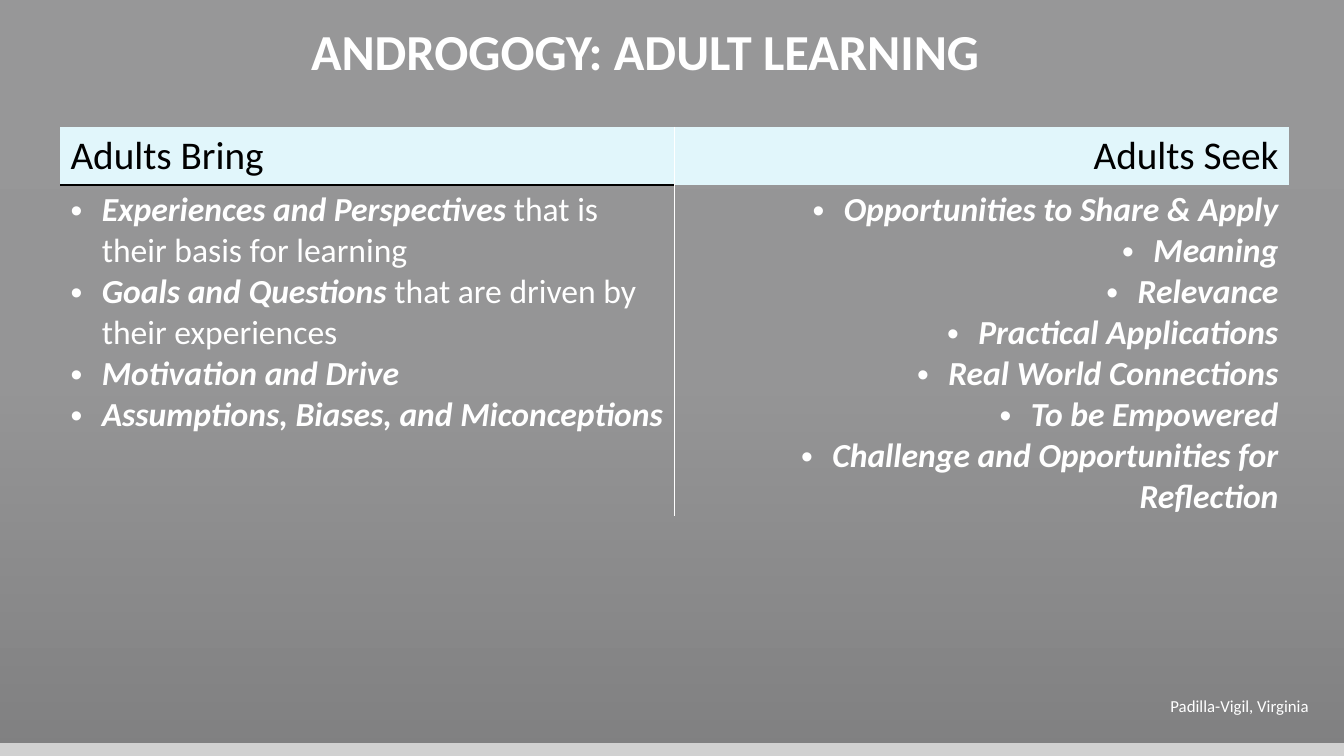
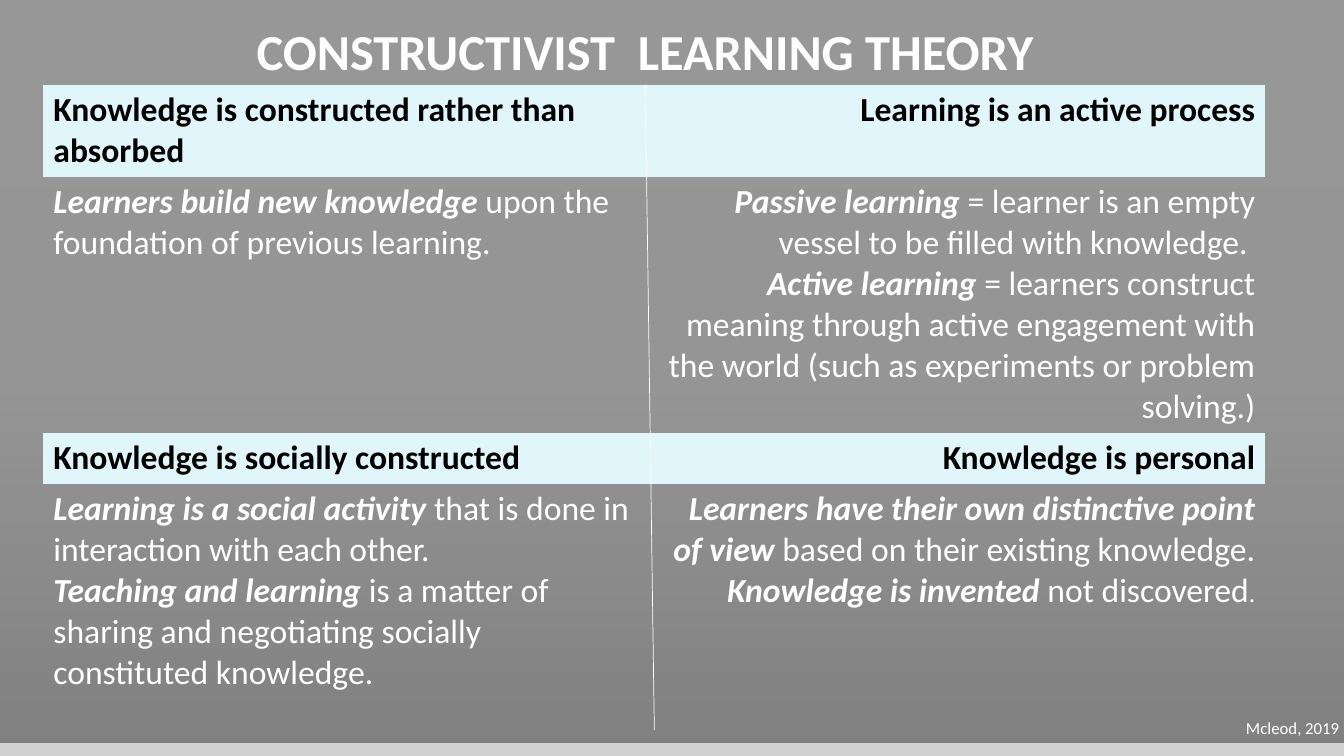
import pptx
import pptx.dml.color
import pptx.enum.shapes
import pptx.enum.text
import pptx.oxml
import pptx.oxml.ns
import pptx.util
from pptx.util import Inches, Pt

COLORS = {"text": "FFFFFF", "dark": "000000", "head": "E1F6FB", "panel": "313133"}
BACK = {0: "FFFFFF", 50: "FBFBFB", 100: "D1D1D1"}
FONT = "Calibri"
PLAIN_GRID = "{2D5ABB26-0587-4C30-8999-92F81FD0307C}"
ALIGN = pptx.enum.text.PP_ALIGN
SHAPE = pptx.enum.shapes.MSO_SHAPE
LINK = pptx.enum.shapes.MSO_CONNECTOR


def rgb(name):
    return pptx.dml.color.RGBColor.from_string(COLORS[name])


def node(xml):
    """Parse an XML piece whose root tag uses the a: prefix."""
    tag, rest = xml[1:].split(" ", 1)
    return pptx.oxml.parse_xml(f"<{tag} {pptx.oxml.ns.nsdecls('a')} {rest}")


class Deck:
    def __init__(self):
        self.prs = pptx.Presentation()
        self.prs.slide_width = Inches(13.33)
        self.prs.slide_height = Inches(7.5)
        self.slide = None
        self.paint()

    def paint(self):
        """Give the master its vertical gradient."""
        master = self.prs.slide_master
        fill = master.background.fill
        fill.gradient()
        fill.gradient_angle = 270
        stops = master.element.xpath(".//p:bg//a:gsLst")[0]
        for stop in list(stops):
            stops.remove(stop)
        for place, color in BACK.items():
            stops.append(node(f'<a:gs pos="{place * 1000}">'
                              f'<a:srgbClr val="{color}"/></a:gs>'))

    def start(self, title):
        """Add a slide with its panel and title."""
        self.slide = self.prs.slides.add_slide(self.prs.slide_layouts[5])
        head = self.slide.shapes.title
        head.element.addprevious(self.panel().element)
        head.left, head.top = Inches(1.95), Inches(0.14)
        head.width, head.height = Inches(8.9), Inches(0.71)
        frame = head.text_frame
        frame.word_wrap = True
        frame.auto_size = pptx.enum.text.MSO_AUTO_SIZE.NONE
        para = frame.paragraphs[0]
        para.alignment = ALIGN.CENTER
        self.run(para, title, 36, "text", bold=True)

    def panel(self):
        box = self.slide.shapes.add_shape(
            SHAPE.RECTANGLE, 0, 0, self.prs.slide_width, Inches(7.37))
        box.shadow.inherit = False
        box.line.fill.background()
        box.fill.solid()
        box.fill.fore_color.rgb = rgb("panel")
        color = box.element.spPr.xpath("./a:solidFill/a:srgbClr")[0]
        color.append(node('<a:alpha val="50000"/>'))
        return box

    def run(self, para, text, size, color, bold=False, italic=False):
        run = para.add_run()
        run.text = text
        font = run.font
        font.name, font.size = FONT, Pt(size)
        font.bold, font.italic = bold, italic
        font.color.rgb = rgb(color)

    def bullet(self, para):
        props = para._p.get_or_add_pPr()
        props.set("marL", str(Inches(0.31)))
        props.set("indent", str(-Inches(0.31)))
        props.append(node('<a:buFont typeface="Arial"/>'))
        props.append(node('<a:buChar char="•"/>'))

    def table(self, left, top, cols, rows):
        table = self.slide.shapes.add_table(
            len(rows), len(cols), Inches(left), Inches(top),
            Inches(sum(cols)), Inches(sum(rows))).table
        table.first_row = table.horz_banding = False
        table._tbl.tblPr.xpath("./a:tableStyleId")[0].text = PLAIN_GRID
        for col, width in zip(table.columns, cols):
            col.width = Inches(width)
        for row, height in zip(table.rows, rows):
            row.height = Inches(height)
        return table

    def lines(self, cell, side):
        """Yield a function that gives the next paragraph of a cell."""
        frame = cell.text_frame
        fresh = [frame.paragraphs[0]]

        def add():
            para = fresh.pop() if fresh else frame.add_paragraph()
            para.alignment = side
            return para
        return add

    def heads(self, table, row, texts, size, bold):
        for col, text in enumerate(texts):
            cell = table.cell(row, col)
            cell.fill.solid()
            cell.fill.fore_color.rgb = rgb("head")
            para = self.lines(cell, SIDES[col])()
            self.run(para, text, size, "dark", bold)

    def body(self, table, row, cells, bullets=False):
        """Fill a row; runs alternate between strong and plain text."""
        for col, paras in enumerate(cells):
            cell = table.cell(row, col)
            cell.fill.background()
            add = self.lines(cell, SIDES[col])
            for runs in paras:
                para = add()
                if bullets:
                    self.bullet(para)
                for num, text in enumerate(runs):
                    strong = num % 2 == 0
                    size = 18 if text == "." else 24
                    self.run(para, text, size, "text",
                             strong and text != ".", strong and text != ".")

    def edge(self, cell, side):
        """Draw a dark cell border on the side 'T' or 'B'."""
        cell._tc.get_or_add_tcPr().insert(0, node(
            f'<a:ln{side} w="{Pt(1)}"><a:solidFill>'
            f'<a:srgbClr val="{COLORS["dark"]}"/></a:solidFill></a:ln{side}>'))

    def line(self, *ends):
        link = self.slide.shapes.add_connector(
            LINK.STRAIGHT, *(Inches(end) for end in ends))
        link.line.color.rgb = rgb("text")
        link.line.width = Pt(0.5)
        link.element.spPr.append(node("<a:effectLst />"))

    def source(self, text, left, top, width):
        box = self.slide.shapes.add_textbox(
            Inches(left), Inches(top), Inches(width), Inches(0.3))
        frame = box.text_frame
        frame.word_wrap = True
        frame.margin_right = 0
        self.run(frame.paragraphs[0], text, 12, "text")


SIDES = (ALIGN.LEFT, ALIGN.RIGHT)

BRING = [
    ["Experiences and Perspectives ", "that is their basis for learning"],
    ["Goals and Questions ", "that are driven by their experiences"],
    ["Motivation and Drive"],
    ["Assumptions, Biases, and Miconceptions"],
]
SEEK = [[text] for text in (
    "Opportunities to Share & Apply", "Meaning", "Relevance",
    "Practical Applications", "Real World Connections", "To be Empowered",
    "Challenge and Opportunities for Reflection")]

BUILT = [["Learners build new knowledge ",
          "upon the foundation of previous learning."]]
ACTIVE = [
    ["Passive learning ",
     "= learner is an empty vessel to be filled with knowledge. "],
    ["Active learning ",
     "= learners construct meaning through active engagement with the world "
     "(such as experiments or problem solving.)"],
]
SOCIAL = [
    ["Learning is a social activity ",
     "that is done in interaction with each other."],
    ["Teaching and learning ",
     "is a matter of sharing and negotiating socially constituted knowledge."],
]
OWN = [["Learners have their own distinctive point of view ",
        "based on their existing knowledge. ",
        "Knowledge is invented ", "not discovered", "."]]


def adults(deck):
    deck.start("ANDROGOGY: ADULT LEARNING")
    table = deck.table(0.6, 1.26, [6.09, 6.09], [0.56, 3.31])
    deck.heads(table, 0, ["Adults Bring", "Adults Seek"], 28, False)
    deck.body(table, 1, [BRING, SEEK], bullets=True)
    deck.edge(table.cell(0, 0), "B")
    deck.edge(table.cell(1, 0), "T")
    deck.line(6.69, 1.26, 6.69, 5.12)
    deck.source("Padilla-Vigil, Virginia", 11.51, 6.85, 1.69)


def theory(deck):
    deck.start("CONSTRUCTIVIST  LEARNING THEORY")
    table = deck.table(0.43, 0.84, [5.98, 6.14], [0.9, 2.49, 0.5, 2.49])
    deck.heads(table, 0, ["Knowledge is constructed rather than absorbed",
                          "Learning is an active process"], 24, True)
    deck.body(table, 1, [BUILT, ACTIVE])
    deck.heads(table, 2, ["Knowledge is socially constructed",
                          "Knowledge is personal"], 24, True)
    deck.body(table, 3, [SOCIAL, OWN])
    deck.source("Mcleod, 2019", 12.26, 7.07, 1.07)
    deck.line(6.4, 0.84, 6.49, 7.24)


def main():
    deck = Deck()
    adults(deck)
    theory(deck)
    deck.prs.save("out.pptx")


if __name__ == "__main__":
    main()
